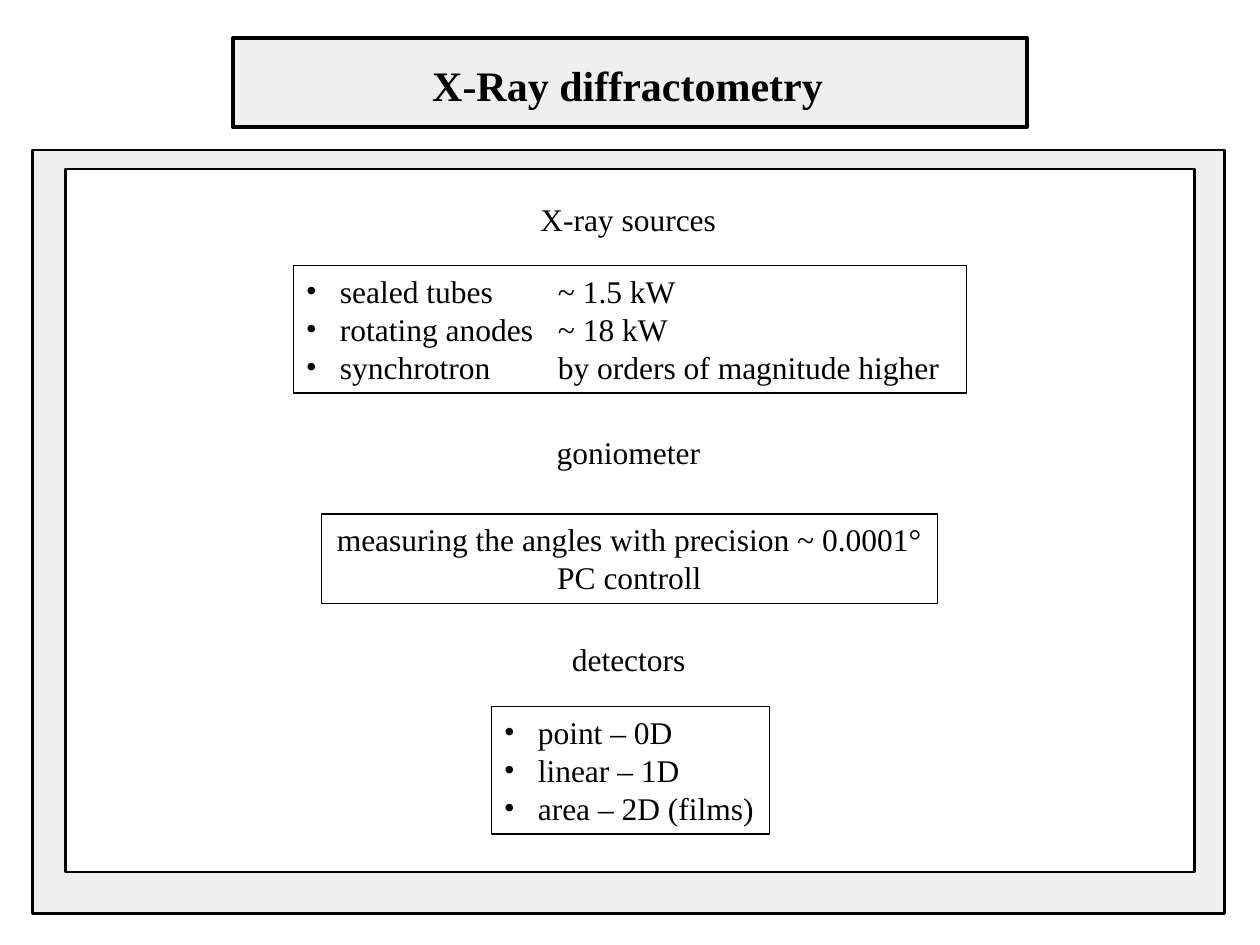
import dataclasses
import typing

import lxml.etree
import pptx
import pptx.dml.color
import pptx.enum.shapes
import pptx.enum.text
import pptx.oxml.ns
import pptx.util

FONT = "Times New Roman"
BLACK = "000000"
WHITE = "FFFFFF"
GREY = "EFEFEF"
INDENT = 0.27
TAB_STOP = 2.0


@dataclasses.dataclass
class Frame:
    left: float
    top: float
    width: float
    height: float
    fill: str
    line_width: float


@dataclasses.dataclass
class TextBox:
    left: float
    top: float
    width: float
    height: float
    lines: typing.List[str]
    outlined: bool = False
    bulleted: bool = False
    centered: bool = False


FRAMES = [
    Frame(1.85, 0.3, 6.3, 0.71, GREY, 2.25),
    Frame(0.26, 1.19, 9.46, 6.06, GREY, 1.5),
    Frame(0.52, 1.34, 8.96, 5.58, WHITE, 1.5),
]

TEXT_BOXES = [
    TextBox(4.19, 1.54, 1.61, 0.4, ["X-ray sources"]),
    TextBox(2.33, 2.11, 5.34, 1.01, [
        "sealed tubes\t~ 1.5 kW",
        "rotating anodes\t~ 18 kW",
        "synchrotron\tby orders of magnitude higher",
    ], outlined=True, bulleted=True),
    TextBox(4.32, 3.39, 1.35, 0.4, ["goniometer"]),
    TextBox(2.55, 4.08, 4.89, 0.71, [
        "measuring the angles with precision ~ 0.0001°",
        "PC controll",
    ], outlined=True, centered=True),
    TextBox(4.44, 5.03, 1.11, 0.4, ["detectors"]),
    TextBox(3.9, 5.61, 2.21, 1.01, [
        "point – 0D",
        "linear – 1D",
        "area – 2D (films)",
    ], outlined=True, bulleted=True),
]


def color(value: str) -> pptx.dml.color.RGBColor:
    return pptx.dml.color.RGBColor.from_string(value)


def inches(*lengths: float) -> typing.List[pptx.util.Length]:
    return [pptx.util.Inches(length) for length in lengths]


def set_line(shape, width: float) -> None:
    shape.line.color.rgb = color(BLACK)
    shape.line.width = pptx.util.Pt(width)


def format_text(frame, size: float, bold: bool = False) -> None:
    for para in frame.paragraphs:
        for span in para.runs:
            span.font.name = FONT
            span.font.size = pptx.util.Pt(size)
            span.font.bold = bold
            span.font.color.rgb = color(BLACK)


def add_bullet(para) -> None:
    properties = para._p.get_or_add_pPr()
    indent = pptx.util.Inches(INDENT)
    properties.set("marL", str(indent))
    properties.set("indent", str(-indent))
    qn = pptx.oxml.ns.qn
    lxml.etree.SubElement(properties, qn("a:buFont"), typeface=FONT)
    lxml.etree.SubElement(properties, qn("a:buChar"), char="•")
    tabs = lxml.etree.SubElement(properties, qn("a:tabLst"))
    lxml.etree.SubElement(tabs, qn("a:tab"), pos=str(pptx.util.Inches(TAB_STOP)), algn="l")


def add_frame(page, item: Frame) -> None:
    shape = page.shapes.add_shape(
        pptx.enum.shapes.MSO_SHAPE.RECTANGLE,
        *inches(item.left, item.top, item.width, item.height))
    shape.shadow.inherit = False
    shape.fill.solid()
    shape.fill.fore_color.rgb = color(item.fill)
    set_line(shape, item.line_width)


def add_text_box(page, item: TextBox) -> None:
    box = page.shapes.add_textbox(*inches(item.left, item.top, item.width, item.height))
    if item.outlined:
        set_line(box, 0.75)
    frame = box.text_frame
    frame.text = "\n".join(item.lines)
    frame.word_wrap = item.bulleted
    frame.auto_size = pptx.enum.text.MSO_AUTO_SIZE.SHAPE_TO_FIT_TEXT
    for para in frame.paragraphs:
        if item.centered:
            para.alignment = pptx.enum.text.PP_ALIGN.CENTER
        if item.bulleted:
            add_bullet(para)
    format_text(frame, 18)


def place_title(page, text: str) -> None:
    title = page.shapes.title
    title.left, title.top, title.width, title.height = inches(3.33, 0.42, 3.33, 0.5)
    frame = title.text_frame
    frame.text = text
    frame.word_wrap = False
    frame.auto_size = pptx.enum.text.MSO_AUTO_SIZE.SHAPE_TO_FIT_TEXT
    frame.vertical_anchor = pptx.enum.text.MSO_ANCHOR.TOP
    frame.paragraphs[0].alignment = pptx.enum.text.PP_ALIGN.LEFT
    format_text(frame, 24, bold=True)
    page.shapes._spTree.append(title._element)


def main() -> None:
    deck = pptx.Presentation()
    deck.slide_width, deck.slide_height = inches(10, 7.5)
    page = deck.slides.add_slide(deck.slide_layouts[5])
    for item in FRAMES:
        add_frame(page, item)
    place_title(page, "X-Ray diffractometry")
    for item in TEXT_BOXES:
        add_text_box(page, item)
    deck.save("out.pptx")


if __name__ == "__main__":
    main()
